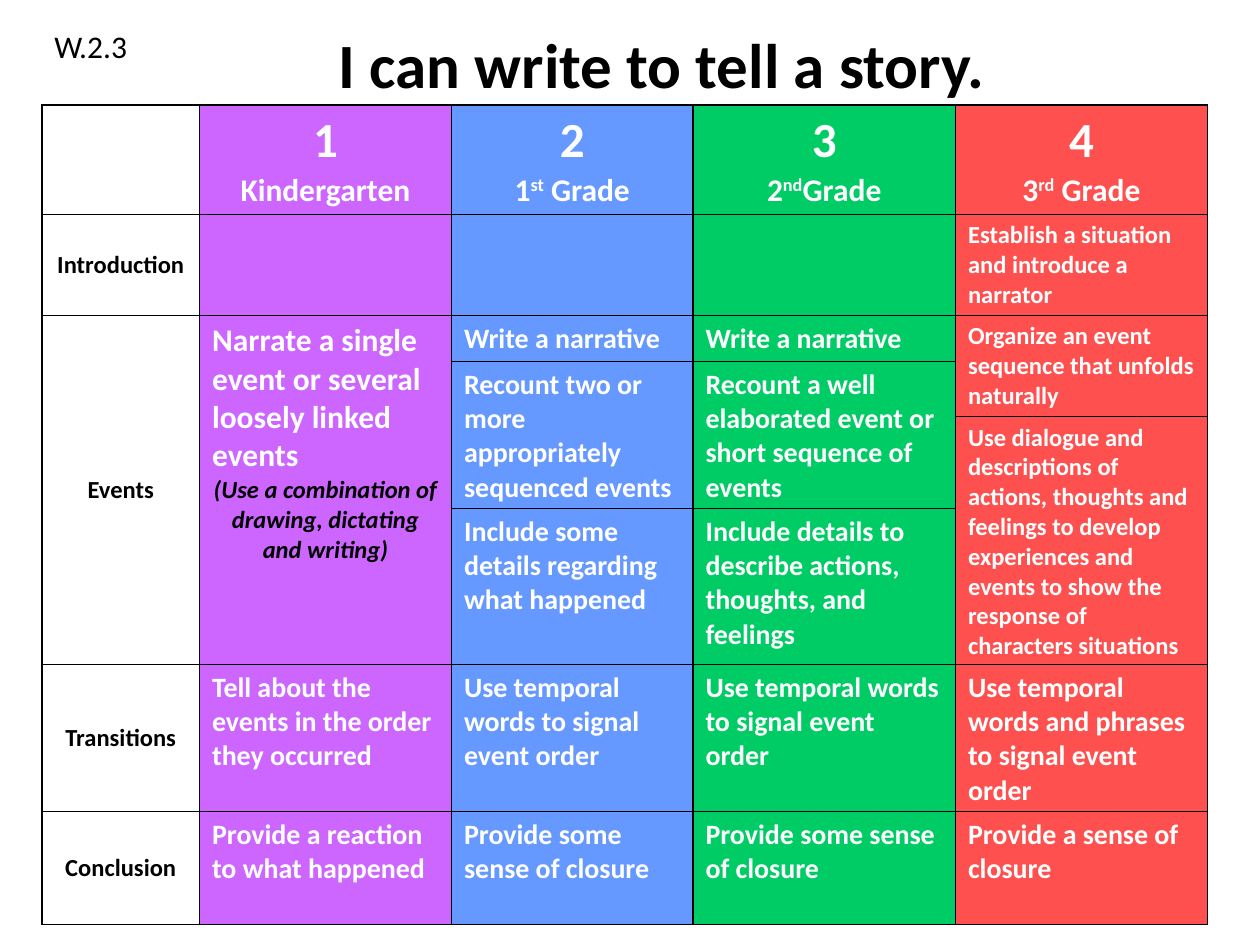
from lxml.etree import SubElement as Sub
from pptx import Presentation
from pptx.dml.color import RGBColor as RGB
from pptx.enum.text import MSO_ANCHOR as Anchor, PP_ALIGN as Align
from pptx.oxml.ns import qn
from pptx.util import Pt

BLACK, WHITE = RGB(0, 0, 0), RGB(255, 255, 255)
PURPLE, BLUE = RGB(0xCC, 0x66, 0xFF), RGB(0x66, 0x99, 0xFF)
GREEN, RED = RGB(0, 0xCC, 0x66), RGB(0xFF, 0x50, 0x50)

# Content: ^ marks the start and end of a superscript
TITLE = "I can write to tell a story."
CODE = "W.2.3"
FILLS = [None, PURPLE, BLUE, GREEN, RED]
WIDTHS = [90, 144, 138, 150, 144]
HEIGHTS = [62.3, 57.7, 26.3, 31.4, 52.6, 89.1, 84, 64.6]
GRADES = ["Kindergarten", "1^st^ Grade", "2^nd^Grade", "3^rd^ Grade"]
LABELS = {1: "Introduction", 2: "Events", 6: "Transitions", 7: "Conclusion"}
HINT = "(Use a combination of drawing, dictating and writing)"
# Row, column, size, text
GOALS = [
    (1, 4, 14, "Establish a situation and introduce a narrator"),
    (2, 1, 18, "Narrate a single event or several loosely linked events"),
    (2, 2, 16, "Write a narrative"),
    (2, 3, 16, "Write a narrative"),
    (2, 4, 14, "Organize an event sequence that unfolds naturally"),
    (3, 2, 16, "Recount two or more appropriately sequenced events"),
    (3, 3, 16, "Recount a well elaborated event or short sequence of events"),
    (4, 4, 14, "Use dialogue and descriptions of actions, thoughts and feelings "
               "to develop experiences and events to show the response of "
               "characters situations"),
    (5, 2, 16, "Include some details regarding what happened"),
    (5, 3, 16, "Include details to describe actions, thoughts, and feelings"),
    (6, 1, 16, "Tell about the events in the order they occurred"),
    (6, 2, 16, "Use temporal words to signal event order"),
    (6, 3, 16, "Use temporal words to signal event order"),
    (6, 4, 16, "Use temporal words and phrases to signal event order"),
    (7, 1, 16, "Provide a reaction to what happened"),
    (7, 2, 16, "Provide some sense of closure"),
    (7, 3, 16, "Provide some sense of closure"),
    (7, 4, 16, "Provide a sense of closure"),
]
# First row, last row, column
SPANS = [(2, 5, 0), (2, 5, 1), (3, 4, 2), (3, 4, 3), (2, 3, 4), (4, 5, 4)]


def write(frame, text, size=16, color=WHITE, bold=True, italic=False,
          align=Align.LEFT, more=False):
    para = frame.add_paragraph() if more else frame.paragraphs[0]
    para.alignment = align
    for i, part in enumerate(text.split("^")):
        run = para.add_run()
        run.text = part
        font = run.font
        font.name, font.size = "Calibri", Pt(size)
        font.bold, font.italic = bold, italic
        font.color.rgb = color
        if i % 2:
            run._r.get_or_add_rPr().set("baseline", "30000")


def border(cell):
    props = cell._tc.get_or_add_tcPr()
    for side in "LRTB":
        line = Sub(props, qn(f"a:ln{side}"), w=str(Pt(1)))
        fill = Sub(line, qn("a:solidFill"))
        Sub(fill, qn("a:srgbClr"), val=str(BLACK))


deck = Presentation()
deck.slide_width, deck.slide_height = Pt(720), Pt(540)
slide = deck.slides.add_slide(deck.slide_layouts[5])

# Title and standard code
title = slide.shapes.title
title.left, title.top, title.width, title.height = Pt(72), Pt(0), Pt(612), Pt(72)
title.text_frame.vertical_anchor = Anchor.MIDDLE
write(title.text_frame, TITLE, size=36, color=BLACK, align=Align.CENTER)

code = slide.shapes.add_textbox(Pt(24), Pt(12), Pt(102), Pt(29))
code.text_frame.word_wrap = True
write(code.text_frame, CODE, size=18, color=BLACK, bold=False)

# Table grid
table = slide.shapes.add_table(len(HEIGHTS), len(WIDTHS), Pt(24), Pt(60),
                               Pt(sum(WIDTHS)), Pt(sum(HEIGHTS))).table
table.first_row = table.horz_banding = False
for col, width in zip(table.columns, WIDTHS):
    col.width = Pt(width)
for row, height in zip(table.rows, HEIGHTS):
    row.height = Pt(height)
    for cell, color in zip(row.cells, FILLS):
        border(cell)
        if color is None:
            cell.fill.background()
        else:
            cell.fill.solid()
            cell.fill.fore_color.rgb = color
for first, last, col in SPANS:
    table.cell(first, col).merge(table.cell(last, col))

# Grade headings
for n, grade in enumerate(GRADES, 1):
    frame = table.cell(0, n).text_frame
    write(frame, str(n), size=28, align=Align.CENTER)
    write(frame, grade, size=18, align=Align.CENTER, more=True)

# Row labels
for r, label in LABELS.items():
    cell = table.cell(r, 0)
    cell.vertical_anchor = Anchor.MIDDLE
    write(cell.text_frame, label, size=14, color=BLACK, align=Align.CENTER)

# Goals
for r, c, size, goal in GOALS:
    write(table.cell(r, c).text_frame, goal, size=size)
write(table.cell(2, 1).text_frame, HINT, size=14, color=BLACK, italic=True,
      align=Align.CENTER, more=True)

deck.save("out.pptx")
